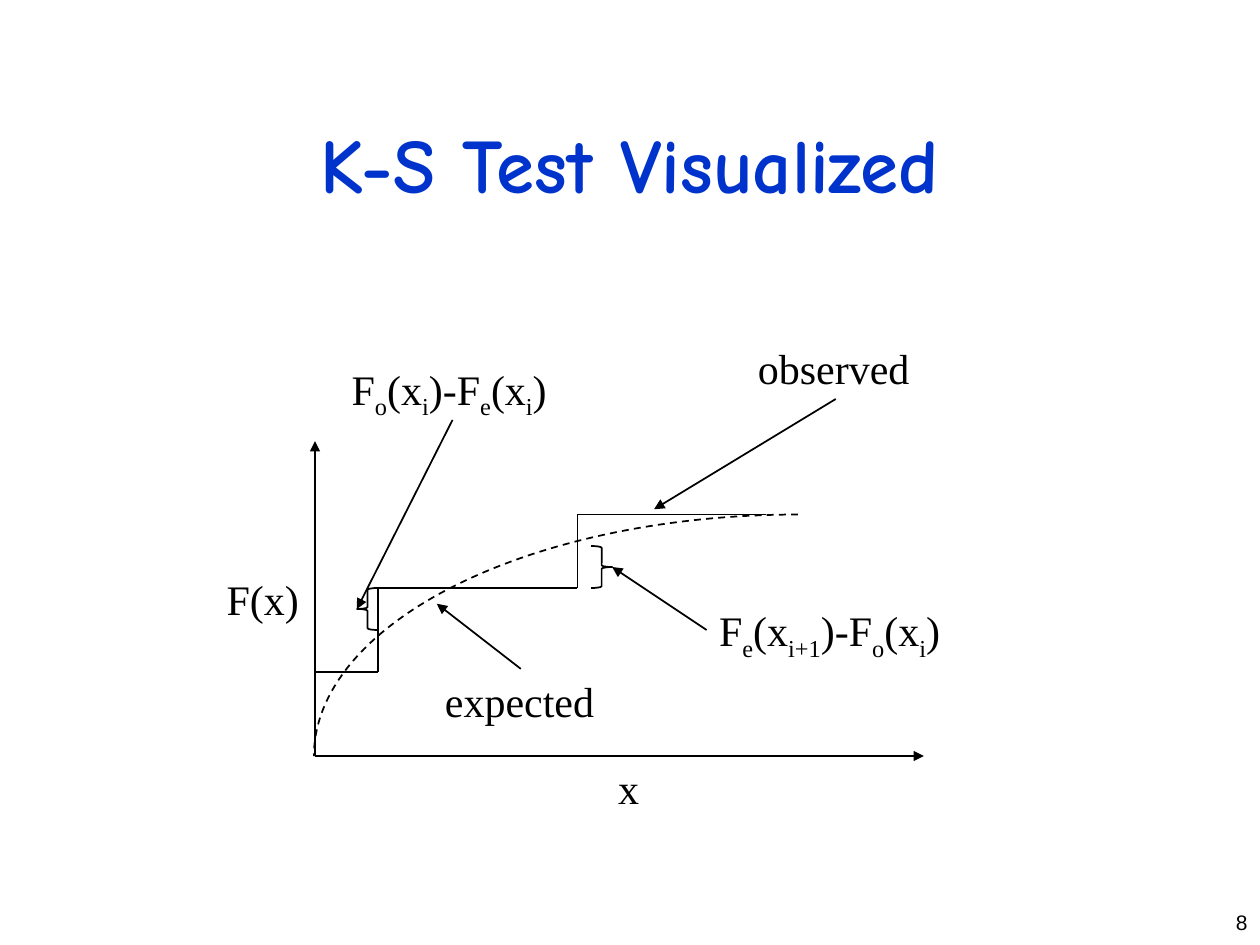
from itertools import pairwise

from lxml.etree import SubElement
from pptx import Presentation
from pptx.dml.color import RGBColor
from pptx.enum.dml import MSO_LINE
from pptx.enum.shapes import MSO_CONNECTOR, MSO_SHAPE
from pptx.enum.text import MSO_ANCHOR, MSO_AUTO_SIZE, PP_ALIGN
from pptx.oxml.ns import qn
from pptx.util import Inches, Pt

presentation = Presentation()
presentation.slide_width = Inches(10)
presentation.slide_height = Inches(7.5)
slide = presentation.slides.add_slide(presentation.slide_layouts[5])

# Grid of 120 columns by 90 rows
column = presentation.slide_width / 120
row = presentation.slide_height / 90


def place(left, top, width, height):
    return [round(left * column), round(top * row), round(width * column), round(height * row)]


def write(paragraph, text, color, **font_format):
    """Add runs split at "|"; every second one is a subscript."""
    for index, part in enumerate(text.split("|")):
        run = paragraph.add_run()
        run.text = part
        for name, value in font_format.items():
            setattr(run.font, name, value)
        run.font.color.rgb = RGBColor.from_string(color)
        if index % 2:
            run.font._element.set("baseline", "-25000")


# Title
title = slide.shapes.title
title.left, title.top, title.width, title.height = place(9, 8, 102, 15)
title.text_frame.vertical_anchor = MSO_ANCHOR.MIDDLE
title_paragraph = title.text_frame.paragraphs[0]
title_paragraph.alignment = PP_ALIGN.CENTER
write(title_paragraph, "K-S Test Visualized", "0033CC", name="Comic Neue", size=Pt(44), bold=True)

# Slide number
number_box = slide.shapes.add_textbox(*place(111, 86, 9, 4))
number_box.text_frame.word_wrap = True
number_paragraph = number_box.text_frame.paragraphs[0]
number_paragraph.alignment = PP_ALIGN.RIGHT
write(number_paragraph, "8", "000000", name="Arial", size=Pt(12))

# Expected curve and the braces that mark the differences
outlines = [
    (MSO_SHAPE.ARC, (29.9, 49, 92.2, 46)),
    (MSO_SHAPE.LEFT_BRACE, (34, 56, 2, 4)),
    (MSO_SHAPE.RIGHT_BRACE, (56.3, 52, 2, 4)),
]
for kind, box in outlines:
    shape = slide.shapes.add_shape(kind, *place(*box))
    shape.shadow.inherit = False
    shape.fill.background()
    shape.line.color.rgb = RGBColor.from_string("000000")
    shape.line.width = Pt(1)
    if kind == MSO_SHAPE.ARC:
        shape.line.dash_style = MSO_LINE.DASH
        shape._element.spPr.find(qn("a:xfrm")).set("flipH", "1")

# Axes, pointers and the observed step function
arrows = [
    ((30, 72), (88, 72)),
    ((30, 72), (30, 42)),
    ((49.6, 63.7), (41.6, 57.5)),
    ((79.6, 38), (62.3, 48.5)),
    ((67.3, 60), (58.3, 54)),
    ((43.1, 40), (34, 58)),
]
steps = [(30, 72), (30, 64), (36, 64), (36, 56), (55, 56), (55, 49), (73, 49)]
lines = [(*ends, True) for ends in arrows] + [(*ends, False) for ends in pairwise(steps)]
for start, end, has_arrowhead in lines:
    connector = slide.shapes.add_connector(MSO_CONNECTOR.STRAIGHT, *place(*start, *end))
    connector.line.color.rgb = RGBColor.from_string("000000")
    connector.line.width = Pt(1)
    if has_arrowhead:
        SubElement(connector.line._get_or_add_ln(), qn("a:tailEnd"), type="triangle")
    SubElement(connector._element.spPr, qn("a:effectLst"))

# Labels
labels = [
    ("x", 57.7, 72, 4.4),
    ("F(x)", 20.4, 54, 9.4),
    ("expected", 41.2, 63.7, 16.8),
    ("observed", 71, 32, 17),
    ("F|e|(x|i+1|)-F|o|(x|i|)", 67.3, 57, 24.6),
    ("F|o|(x|i|)-F|e|(x|i|)", 32.3, 34, 21.7),
]
for text, left, top, width in labels:
    label = slide.shapes.add_textbox(*place(left, top, width, 6))
    label.text_frame.word_wrap = False
    label.text_frame.auto_size = MSO_AUTO_SIZE.SHAPE_TO_FIT_TEXT
    write(label.text_frame.paragraphs[0], text.rstrip("|"), "000000",
          name="Times New Roman", size=Pt(24))

presentation.save("out.pptx")
